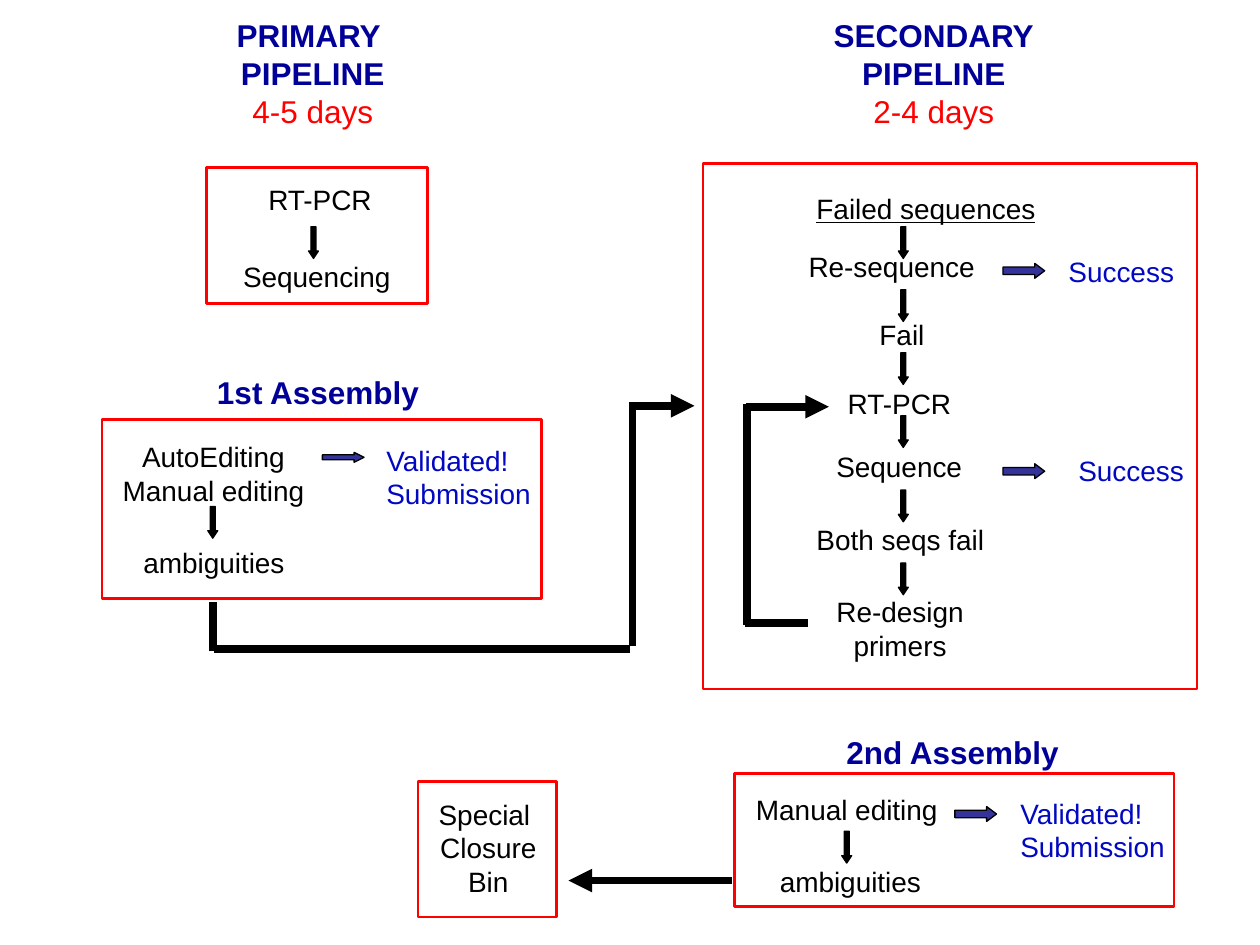
"""Draw the two sequencing pipelines and their assembly steps."""
from lxml.etree import SubElement
from pptx import Presentation
from pptx.dml.color import RGBColor
from pptx.enum.shapes import MSO_CONNECTOR, MSO_SHAPE
from pptx.enum.text import MSO_AUTO_SIZE, PP_ALIGN
from pptx.oxml.ns import qn
from pptx.util import Cm, Pt

COLORS = {"ink": "000000", "navy": "000099", "blue": "0108C1",
          "red": "FF0000", "arrow": "333399"}
FONT = "Arial"
LINE = 0.94
PAIR = 1.63

FRAMES = [
    (4.17, 3.38, 4.45, 2.74),
    (14.17, 3.3, 9.96, 10.59),
    (14.81, 15.6, 8.86, 2.67),
    (2.06, 8.46, 8.86, 3.61),
    (8.43, 15.75, 2.79, 2.74),
]
HEADS = [
    (4.5, 0.2, 3.61, 2.54, ["PRIMARY ", "PIPELINE", "4-5 days"]),
    (16.54, 0.2, 4.57, 2.54, ["SECONDARY", "PIPELINE", "2-4 days"]),
    (4.11, 7.39, 4.6, 1.02, ["1st Assembly"]),
    (16.79, 14.66, 4.83, 1.02, ["2nd Assembly"]),
]
STEPS = [
    (5.16, 3.56, 2.64, LINE, ["RT-PCR"]),
    (4.65, 5.11, 3.51, LINE, ["Sequencing"]),
    (16.05, 4.9, 3.86, LINE, ["Re-sequence"]),
    (17.48, 6.27, 1.42, LINE, ["Fail"]),
    (16.84, 7.67, 2.64, LINE, ["RT-PCR"]),
    (16.61, 8.94, 3.05, LINE, ["Sequence"]),
    (16.21, 10.41, 3.89, LINE, ["Both seqs fail"]),
    (14.99, 15.85, 4.19, 2.29, ["Manual editing"]),
    (15.47, 17.3, 3.35, LINE, ["ambiguities"]),
    (2.64, 10.87, 3.35, LINE, ["ambiguities"]),
]
GROUPS = [
    (16.61, 11.86, 3.07, PAIR, ["Re-design", "primers"]),
    (2.21, 8.74, 4.19, 2.97, ["AutoEditing", "Manual editing"]),
    (8.59, 15.95, 2.51, 2.97, ["Special ", "Closure", "Bin"]),
]
RESULTS = [
    (21.29, 5, 2.64, LINE, ["Success"]),
    (21.49, 9.02, 2.64, LINE, ["Success"]),
    (20.32, 15.93, 3.43, PAIR, ["Validated!", "Submission"]),
    (7.54, 8.81, 3.43, PAIR, ["Validated!", "Submission"]),
]
DROPS = [(6.22, 4.57), (16.97, 16.76), (4.19, 10.21)]
DROPS += [(18.11, 4.57 + 1.27 * i) for i in range(4)]
DROPS += [(18.11, 9.88), (18.11, 11.35)]
EXITS = [(20.22, 5.31, 0.3), (20.22, 9.35, 0.3),
         (19.25, 16.26, 0.3), (6.5, 9.12, 0.2)]
LINKS = [
    (16.28, 12.55, 15.01, 12.55, False),
    (15.06, 12.6, 15.06, 8.15, False),
    (15.04, 8.2, 16.71, 8.2, True),
    (4.29, 13.13, 4.29, 12.14, False),
    (12.7, 13.08, 4.32, 13.08, False),
    (12.75, 13.03, 12.75, 8.1, False),
    (12.7, 8.18, 14, 8.18, True),
    (14.76, 17.75, 11.46, 17.75, True),
]


def tint(name):
    """Return the named colour."""
    return RGBColor.from_string(COLORS[name])


def add_text(slide, x, y, w, h, lines, color="ink", size=16, bold=False,
             align=PP_ALIGN.LEFT):
    """Add a text box with one paragraph per line and return its paragraphs."""
    frame = slide.shapes.add_textbox(Cm(x), Cm(y), Cm(w), Cm(h)).text_frame
    frame.text = "\n".join(lines)
    frame.word_wrap = False
    frame.auto_size = MSO_AUTO_SIZE.SHAPE_TO_FIT_TEXT
    for para in frame.paragraphs:
        para.alignment = align
        para.font.name = FONT
        para.font.size = Pt(size)
        para.font.bold = bold
        para.font.color.rgb = tint(color)
    return frame.paragraphs


def add_head(slide, x, y, w, h, lines):
    """Add a bold heading whose third line is a plain red duration."""
    paras = add_text(slide, x, y, w, h, lines, "navy", 18, True,
                     PP_ALIGN.CENTER)
    for para in paras[2:]:
        para.font.bold = False
        para.font.color.rgb = tint("red")


def add_frame(slide, x, y, w, h):
    """Add a hollow red rectangle."""
    box = slide.shapes.add_shape(MSO_SHAPE.RECTANGLE, Cm(x), Cm(y), Cm(w), Cm(h))
    box.shadow.inherit = False
    box.fill.background()
    box.line.color.rgb = tint("red")
    box.line.width = Pt(1.5)


def add_arrow(slide, kind, x, y, w, h, color, head):
    """Add a filled block arrow with the given head ratio."""
    arrow = slide.shapes.add_shape(kind, Cm(x), Cm(y), Cm(w), Cm(h))
    arrow.shadow.inherit = False
    arrow.adjustments[0] = 0.5
    arrow.adjustments[1] = head
    arrow.fill.solid()
    arrow.fill.fore_color.rgb = tint(color)
    arrow.line.color.rgb = tint("ink")
    arrow.line.width = Pt(0.75)


def add_link(slide, x1, y1, x2, y2, tip):
    """Add a thick line, with an arrowhead at its end if tip is set."""
    link = slide.shapes.add_connector(MSO_CONNECTOR.STRAIGHT,
                                      Cm(x1), Cm(y1), Cm(x2), Cm(y2))
    link.line.color.rgb = tint("ink")
    link.line.width = Pt(4.5)
    if tip:
        SubElement(link.line._get_or_add_ln(), qn("a:tailEnd"), type="triangle")
    SubElement(link._element.spPr, qn("a:effectLst"))


def main():
    """Build the slide and save it."""
    deck = Presentation()
    deck.slide_width, deck.slide_height = Cm(25.4), Cm(19.05)
    slide = deck.slides.add_slide(deck.slide_layouts[6])
    for frame in FRAMES:
        add_frame(slide, *frame)
    for head in HEADS:
        add_head(slide, *head)
    title = add_text(slide, 16.21, 3.73, 4.93, LINE, ["Failed sequences"])
    title[0].font.underline = True
    for step in STEPS:
        add_text(slide, *step)
    for group in GROUPS:
        add_text(slide, *group, align=PP_ALIGN.CENTER)
    for result in RESULTS:
        add_text(slide, *result, color="blue")
    for x, y in DROPS:
        add_arrow(slide, MSO_SHAPE.DOWN_ARROW, x, y, 0.2, 0.64, "ink", 0.75)
    for x, y, h in EXITS:
        add_arrow(slide, MSO_SHAPE.RIGHT_ARROW, x, y, 0.84, h, "arrow", 0.2 / h)
    for link in LINKS:
        add_link(slide, *link)
    deck.save("out.pptx")


if __name__ == "__main__":
    main()
